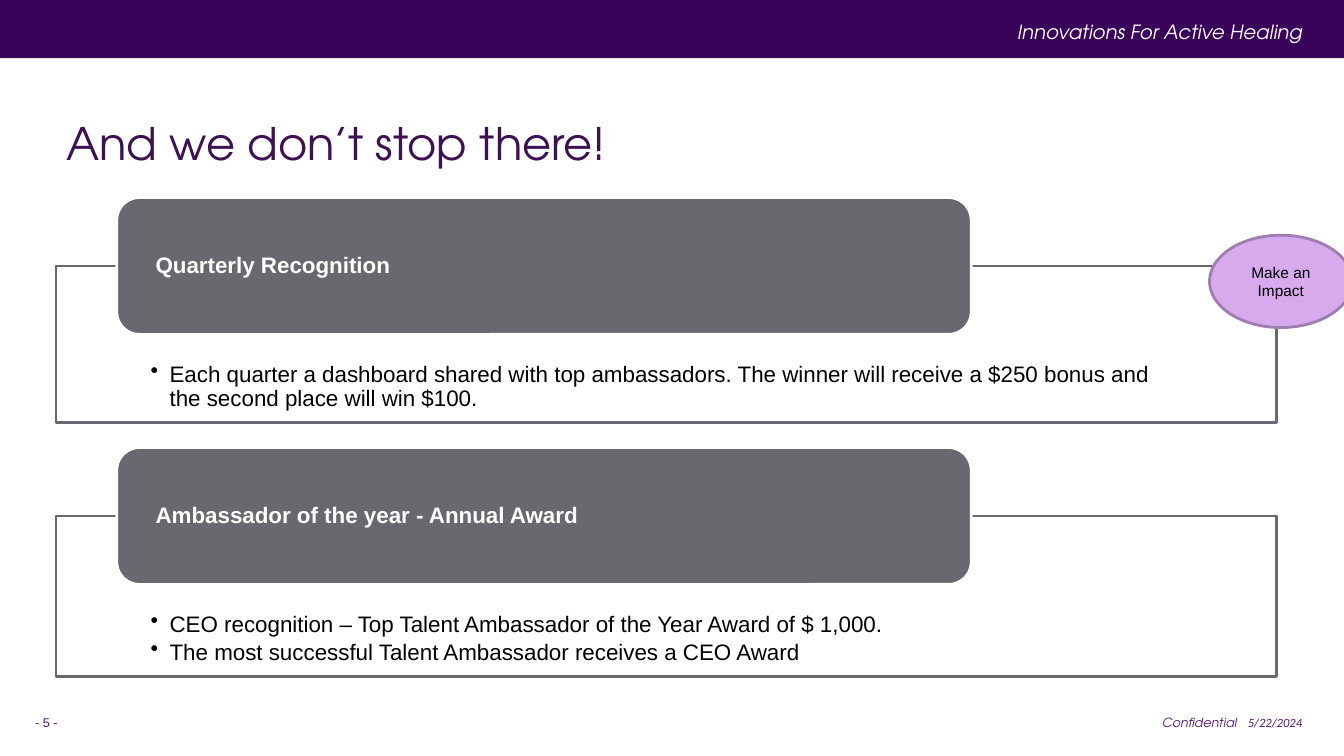
from dataclasses import dataclass

from lxml import etree
from pptx import Presentation
from pptx.dml.color import RGBColor
from pptx.enum import shapes, text
from pptx.oxml import ns
from pptx.util import Pt


@dataclass(frozen=True)
class Theme:
    band: str = "380359"
    title: str = "3D1152"
    foot: str = "561874"
    grey: str = "68696F"
    lilac: str = "D7A9ED"
    rim: str = "9F7DAF"
    white: str = "FFFFFF"
    black: str = "000000"
    head: str = "TeX Gyre Adventor"
    body: str = "Arial"
    date: str = "Calibri"
    big: float = 32
    mid: float = 16
    tag: float = 14
    note: float = 11
    small: float = 9


T = Theme()
LEFT, MID, RIGHT = text.PP_ALIGN.LEFT, text.PP_ALIGN.CENTER, text.PP_ALIGN.RIGHT
TOP, CENTRE = text.MSO_ANCHOR.TOP, text.MSO_ANCHOR.MIDDLE
KIND = shapes.MSO_SHAPE


def apply(obj, vals):
    for key, val in vals.items():
        setattr(obj, key, val)


def font(size, color, name=T.body, **more):
    return dict(size=Pt(size), name=name, color=color, **more)


def bullet(para, ind):
    """Give the paragraph a hanging round bullet."""
    props = para._p.get_or_add_pPr()
    props.set("marL", str(Pt(ind)))
    props.set("indent", str(-Pt(ind)))
    etree.SubElement(props, ns.qn("a:buChar"), char="•")


def write(shape, lines, look, align=LEFT, anchor=CENTRE,
          pad=(7.2, 3.6, 7.2, 3.6), wrap=True, ind=0, para=None):
    """Fill a shape with paragraphs; pad is left, top, right, bottom."""
    frame = shape.text_frame
    sides = ("margin_left", "margin_top", "margin_right", "margin_bottom")
    apply(frame, dict(zip(sides, map(Pt, pad))))
    apply(frame, dict(word_wrap=wrap, vertical_anchor=anchor,
                      auto_size=text.MSO_AUTO_SIZE.NONE))
    look = dict(look)
    color = RGBColor.from_string(look.pop("color"))
    for i, line in enumerate(lines):
        p = frame.add_paragraph() if i else frame.paragraphs[0]
        apply(p, dict(alignment=align, **(para or {})))
        if ind:
            bullet(p, ind)
        run = p.add_run()
        run.text = line
        apply(run.font, look)
        run.font.color.rgb = color


def block(slide, kind, box, fill, line=None):
    shape = slide.shapes.add_shape(kind, *map(Pt, box))
    shape.shadow.inherit = False
    shape.fill.solid()
    shape.fill.fore_color.rgb = RGBColor.from_string(fill)
    if line:
        shape.line.color.rgb = RGBColor.from_string(line)
        shape.line.width = Pt(2)
    else:
        shape.line.fill.background()
    return shape


def label(slide, box, line, look, **more):
    write(slide.shapes.add_textbox(*map(Pt, box)), [line], look, **more)


def header(slide, box):
    x, y, w, h = box
    block(slide, KIND.RECTANGLE, box, T.band)
    label(slide, (x + w - 414, y + 10.8, 391.7, 24.5),
          "Innovations For Active Healing",
          font(T.tag, T.white, T.head, italic=True), align=RIGHT, anchor=TOP)


def heading(slide, box):
    title = slide.shapes.title
    apply(title, dict(zip(("left", "top", "width", "height"), map(Pt, box))))
    write(title, ["And we don’t stop there!"], font(T.big, T.title, T.head))


def panel(slide, box, name, points):
    """Draw a framed list whose name tab straddles the top edge."""
    x, y, w, h = box
    frame = block(slide, KIND.RECTANGLE, box, T.white, T.grey)
    write(frame, points, font(T.mid, T.black), anchor=TOP, ind=13.5,
          pad=(67.7, 69.1, 67.7, 8.6),
          para=dict(line_spacing=0.9, space_after=Pt(2.9)))
    tab = block(slide, KIND.ROUNDED_RECTANGLE,
                (x + 43.4, y - 48.9, 610.4, 97.8), T.grey, T.white)
    write(tab, [name], font(T.mid, T.white, bold=True),
          pad=(23, 0, 23, 0), para=dict(line_spacing=0.9))


def badge(slide, box):
    oval = block(slide, KIND.OVAL, box, T.lilac, T.rim)
    write(oval, ["Make an Impact"], font(T.note, T.black), align=MID,
          pad=(0, 3.6, 0, 3.6))


def footer(slide, box):
    x, y, w, h = box
    label(slide, (x, y, 56.2, h), "- 5 -", font(T.small, T.foot))
    label(slide, (x + w - 131, y + 5, 68.4, 18), "Confidential",
          font(T.small, T.foot, T.head, italic=True), anchor=TOP, wrap=False)
    label(slide, (x + w - 69.8, y, 69.8, h), "5/22/2024",
          font(T.small, T.foot, T.date, italic=True))


def main():
    prs = Presentation()
    apply(prs, dict(slide_width=Pt(960), slide_height=Pt(540)))
    slide = prs.slides.add_slide(prs.slide_layouts[5])
    header(slide, (0, 0, 960, 41.5))
    heading(slide, (40, 57, 872, 90))
    panel(slide, (40, 190, 872, 112), "Quarterly Recognition", [
        "Each quarter a dashboard shared with top ambassadors. The winner "
        "will receive a $250 bonus and the second place will win $100."])
    panel(slide, (40, 368.6, 872, 114.6),
          "Ambassador of the year - Annual Award", [
              "CEO recognition – Top Talent Ambassador of the Year Award "
              "of $ 1,000.",
              "The most successful Talent Ambassador receives a CEO Award"])
    badge(slide, (864, 168, 102, 66))
    footer(slide, (18, 502, 936, 28.8))
    prs.save("out.pptx")


if __name__ == "__main__":
    main()
